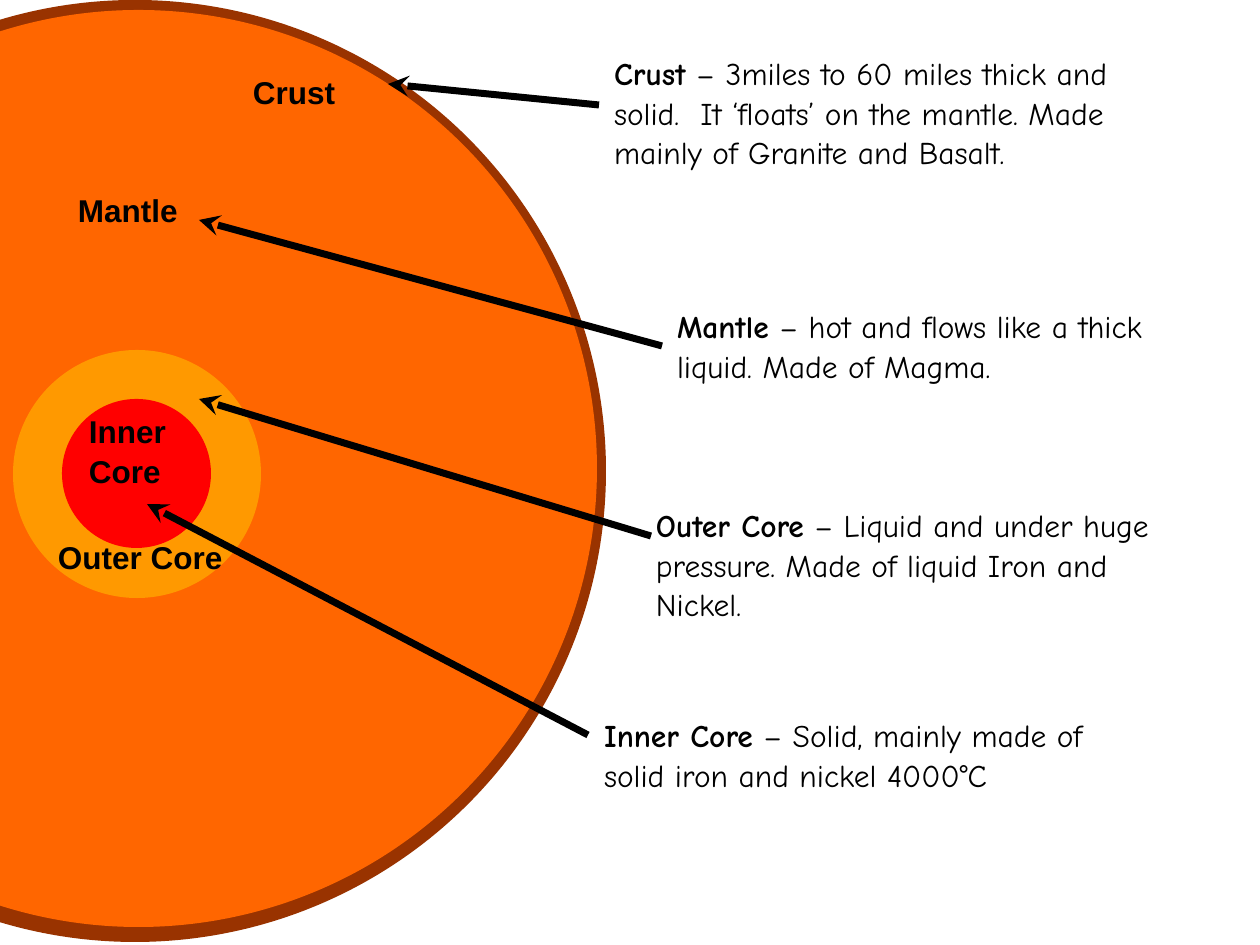
"""Build a slide showing the layers of the Earth with labels and descriptions."""
from lxml.etree import SubElement
from pptx import Presentation
from pptx.dml.color import RGBColor
from pptx.enum.shapes import MSO_CONNECTOR, MSO_SHAPE
from pptx.enum.text import MSO_ANCHOR
from pptx.oxml.ns import qn
from pptx.util import Pt

COLORS = {
    "crust": "993300",
    "mantle": "FF6600",
    "outer core": "FF9900",
    "inner core": "FF0000",
    "ink": "000000",
    "paper": "FFFFFF",
}
LAYERS = [
    ("crust", -336, 0, 942),
    ("mantle", -320, 10, 917),
    ("outer core", 13, 350, 248),
    ("inner core", 62, 399, 149),
]
LABELS = [
    ("Inner Core", 84, 410, 116),
    ("Outer Core", 53, 536, 221),
    ("Mantle", 73, 189, 136),
    ("Crust", 248, 71, 116),
]
DESCRIPTIONS = [
    ("Inner Core", " – Solid, mainly made of solid iron and nickel 4000°C", 599, 714, 130),
    ("Outer Core", " – Liquid and under huge pressure. Made of liquid Iron and Nickel.", 651, 504, 130),
    ("Mantle", " – hot and flows like a thick liquid. Made of Magma.", 672, 305, 130),
    ("Crust", " – 3miles to 60 miles thick and solid.  It ‘floats’ on the mantle. "
              "Made mainly of Granite and Basalt.", 609, 52, 188),
]
ARROWS = [
    ((588, 735), (147, 504)),
    ((651, 536), (199, 399)),
    ((662, 346), (199, 220)),
    ((599, 105), (388, 84)),
]
LABEL_HEIGHT = 49
DESCRIPTION_WIDTH = 525
TEXT_INSET = 5


def px(length):
    return round(length * 914400 / 126)


def color(name):
    return RGBColor.from_string(COLORS[name])


def add_layer(group, name, left, top, diameter):
    layer = group.shapes.add_shape(
        MSO_SHAPE.OVAL, px(left), px(top), px(diameter), px(diameter))
    layer.shadow.inherit = False
    layer.fill.solid()
    layer.fill.fore_color.rgb = color(name)
    layer.line.fill.background()


def add_text(slide, bounds, runs, font, space_before):
    box = slide.shapes.add_textbox(*map(px, bounds))
    frame = box.text_frame
    frame.word_wrap = True
    frame.vertical_anchor = MSO_ANCHOR.TOP
    frame.margin_left = frame.margin_right = px(TEXT_INSET)
    frame.margin_top = frame.margin_bottom = 0
    para = frame.paragraphs[0]
    para.space_before = Pt(space_before)
    para.line_spacing = 1.05
    for text, bold in runs:
        span = para.add_run()
        span.text = text
        span.font.name = font
        span.font.size = Pt(18)
        span.font.bold = bold
        span.font.color.rgb = color("ink")


def add_arrow(slide, start, end):
    arrow = slide.shapes.add_connector(
        MSO_CONNECTOR.STRAIGHT, *map(px, start + end))
    arrow.line.color.rgb = color("ink")
    arrow.line.width = Pt(4)
    SubElement(arrow.line._get_or_add_ln(), qn("a:tailEnd"), type="stealth")
    SubElement(arrow._element.spPr, qn("a:effectLst"))


def main():
    deck = Presentation()
    deck.slide_width, deck.slide_height = px(1260), px(945)
    slide = deck.slides.add_slide(deck.slide_layouts[6])
    slide.background.fill.solid()
    slide.background.fill.fore_color.rgb = color("paper")
    earth = slide.shapes.add_group_shape()
    for layer in LAYERS:
        add_layer(earth, *layer)
    for text, left, top, width in LABELS:
        add_text(slide, (left, top, width, LABEL_HEIGHT), [(text, True)], "Arial", 10.5)
    for term, detail, left, top, height in DESCRIPTIONS:
        add_text(slide, (left, top, DESCRIPTION_WIDTH, height),
                 [(term, True), (detail, False)], "Comic Neue", 16.5)
    for start, end in ARROWS:
        add_arrow(slide, start, end)
    deck.save("out.pptx")


if __name__ == "__main__":
    main()
